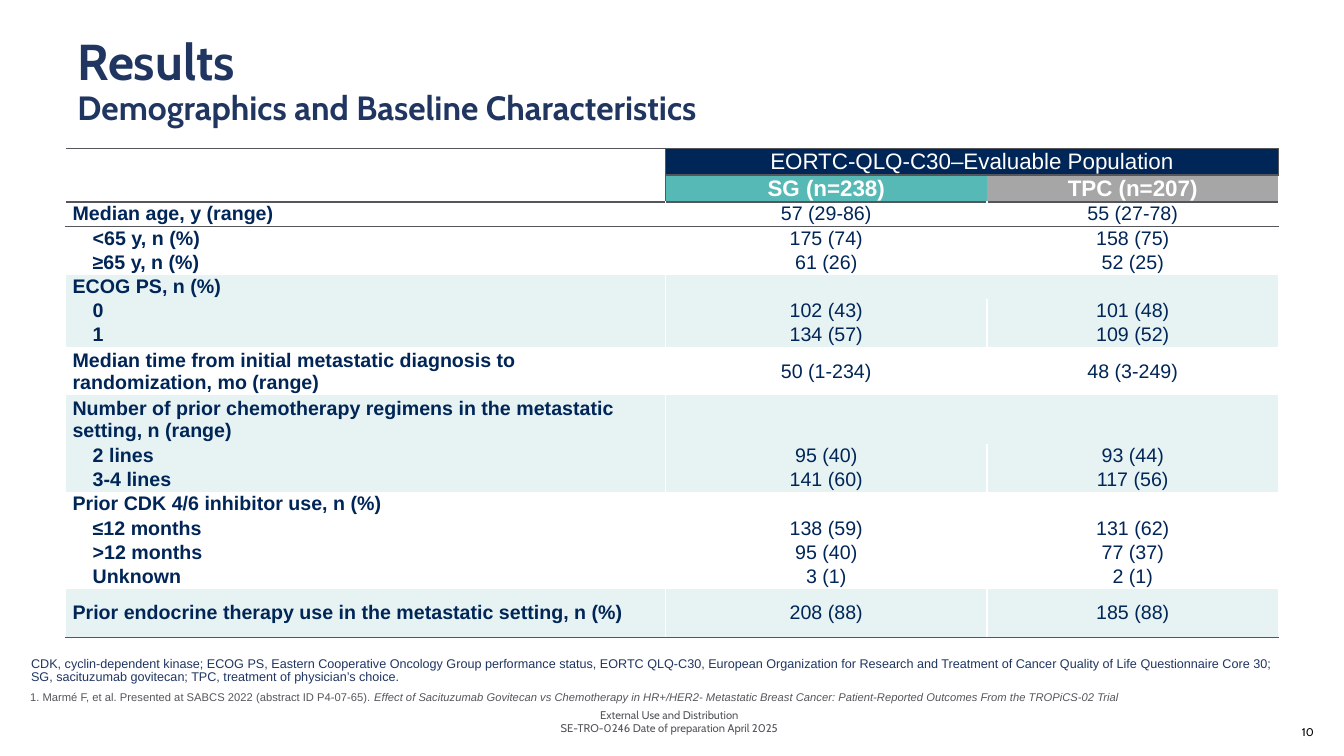
from lxml import etree
from pptx import Presentation
from pptx.dml.color import RGBColor
from pptx.enum.text import MSO_ANCHOR, PP_ALIGN
from pptx.oxml.ns import qn
from pptx.util import Inches, Pt

LEFT, CENTER, RIGHT = PP_ALIGN.LEFT, PP_ALIGN.CENTER, PP_ALIGN.RIGHT
TOP, MIDDLE, BOTTOM = MSO_ANCHOR.TOP, MSO_ANCHOR.MIDDLE, MSO_ANCHOR.BOTTOM
BLANK_LAYOUT = 6
NO_STYLE = "{2D5ABB26-0587-4C30-8999-92F81FD0307C}"
COLORS = {
    "title": "203661", "navy": "002557", "teal": "57B9B5", "silver": "A6A6A6",
    "tint": "E7F3F3", "gray": "54565B", "white": "FFFFFF", "black": "000000",
}
COLUMN_WIDTHS = (5.95, 3.19, 2.89)
ROW_HEIGHT = 0.24
HEADER_ROWS = 2
GROUPS = [
    [("Median age, y (range)", "57 (29-86)", "55 (27-78)"),
     ("<65 y, n (%)", "175 (74)", "158 (75)"),
     ("≥65 y, n (%)", "61 (26)", "52 (25)")],
    [("ECOG PS, n (%)", "", ""),
     ("0", "102 (43)", "101 (48)"),
     ("1", "134 (57)", "109 (52)")],
    [("Median time from initial metastatic diagnosis to randomization, mo (range)",
      "50 (1-234)", "48 (3-249)")],
    [("Number of prior chemotherapy regimens in the metastatic setting, n (range)", "", ""),
     ("2 lines", "95 (40)", "93 (44)"),
     ("3-4 lines", "141 (60)", "117 (56)")],
    [("Prior CDK 4/6 inhibitor use, n (%)", "", ""),
     ("≤12 months", "138 (59)", "131 (62)"),
     (">12 months", "95 (40)", "77 (37)"),
     ("Unknown", "3 (1)", "2 (1)")],
    [("Prior endocrine therapy use in the metastatic setting, n (%)", "208 (88)", "185 (88)")],
]
DOUBLE_ROWS = (8, 9, 16)


def style_span(span, size, color, font="Arial", bold=False, italic=False):
    """Set the font of one run."""
    span.font.name = font
    span.font.size = Pt(size)
    span.font.bold = bold
    span.font.italic = italic
    span.font.color.rgb = RGBColor.from_string(COLORS[color])


def add_text(page, place, paragraphs, align=LEFT, anchor=TOP, spacing=1.0):
    """Add a text box; each paragraph is a list of (text, style) runs."""
    box = page.shapes.add_textbox(*map(Inches, place))
    frame = box.text_frame
    frame.word_wrap = True
    frame.vertical_anchor = anchor
    for index, spans in enumerate(paragraphs):
        para = frame.add_paragraph() if index else frame.paragraphs[0]
        para.alignment = align
        para.line_spacing = spacing
        for text, style in spans:
            span = para.add_run()
            span.text = text
            style_span(span, **style)


def set_borders(cell, **sides):
    """Draw one-point borders on the sides L, R, T and B given by colour name."""
    properties = cell._tc.get_or_add_tcPr()
    for side in "LRTB":
        if side in sides:
            line = etree.SubElement(properties, qn(f"a:ln{side}"), w=str(Pt(1)))
            fill = etree.SubElement(line, qn("a:solidFill"))
            etree.SubElement(fill, qn("a:srgbClr"), val=COLORS[sides[side]])


def fill_cell(cell, text, size, color, fill=None, align=CENTER, bold=False, indent=0):
    """Set the text, insets and fill of one table cell."""
    cell.margin_left = cell.margin_right = Inches(0.07)
    cell.margin_top = cell.margin_bottom = 0
    cell.vertical_anchor = MIDDLE
    if fill:
        cell.fill.solid()
        cell.fill.fore_color.rgb = RGBColor.from_string(COLORS[fill])
    else:
        cell.fill.background()
    para = cell.text_frame.paragraphs[0]
    para.alignment = align
    if text:
        para.text = text
        style_span(para.runs[0], size, color, bold=bold)
    else:
        etree.SubElement(para._p, qn("a:endParaRPr"), sz=str(size * 100))
    if indent:
        para._p.get_or_add_pPr().set("marL", str(Inches(indent)))


def fill_header(table):
    """Fill the two header rows."""
    rows = [
        [("", "white"), ("EORTC-QLQ-C30–Evaluable Population", "navy"), ("", "navy")],
        [("", "white"), ("SG (n=238)", "teal"), ("TPC (n=207)", "silver")],
    ]
    for row, entries in enumerate(rows):
        for column, (text, fill) in enumerate(entries):
            cell = table.cell(row, column)
            if column == 0:
                set_borders(cell, R="gray", T="gray", B="gray")
            elif row == 0:
                set_borders(cell, L="gray", R="gray", T="gray", B="gray")
            else:
                set_borders(cell, T="gray", B="gray")
            fill_cell(cell, text, 16, "white", fill, bold=row == 1)
    table.cell(0, 0).merge(table.cell(1, 0))
    table.cell(0, 1).merge(table.cell(0, 2))


def fill_body(table):
    """Fill the groups of characteristics, every second one tinted."""
    row = HEADER_ROWS
    last = len(table.rows) - 1
    for number, group in enumerate(GROUPS):
        fill = "tint" if number % 2 else None
        for position, entries in enumerate(group):
            edges = {"L": "white", "R": "white"}
            if row == HEADER_ROWS:
                edges["T"] = "gray"
            if row == last:
                edges["B"] = "gray"
            for column, text in enumerate(entries):
                cell = table.cell(row, column)
                set_borders(cell, **edges)
                label = column == 0
                fill_cell(cell, text, 14, "navy", fill, LEFT if label else CENTER,
                          label, 0.2 if label and position else 0)
            if not entries[1]:
                table.cell(row, 1).merge(table.cell(row, 2))
            row += 1


def add_baseline_table(page):
    """Add the table of baseline characteristics."""
    row_count = HEADER_ROWS + sum(map(len, GROUPS))
    heights = [ROW_HEIGHT * (2 if row in DOUBLE_ROWS else 1) for row in range(row_count)]
    table = page.shapes.add_table(
        row_count, len(COLUMN_WIDTHS), Inches(0.65), Inches(1.47),
        Inches(sum(COLUMN_WIDTHS)), Inches(sum(heights))).table
    table.first_row = table.horz_banding = False
    table._tbl.tblPr.find(qn("a:tableStyleId")).text = NO_STYLE
    for column, width in zip(table.columns, COLUMN_WIDTHS):
        column.width = Inches(width)
    for row, height in zip(table.rows, heights):
        row.height = Inches(height)
    fill_header(table)
    fill_body(table)


def main():
    """Build the slide and save it."""
    deck = Presentation()
    deck.slide_width, deck.slide_height = Inches(13.33), Inches(7.5)
    page = deck.slides.add_slide(deck.slide_layouts[BLANK_LAYOUT])
    heading = {"color": "title", "font": "Cabin", "bold": True}
    footer = {"size": 8, "color": "gray", "font": "Cabin"}
    source = {"size": 8, "color": "gray"}

    add_text(page, (5.14, 7, 3, 0.32), [
        [("External Use and Distribution", footer)],
        [("SE-TRO-0246 Date of preparation April 2025", footer)],
    ], CENTER, MIDDLE)
    add_text(page, (0.67, 0.26, 11.95, 1.06), [
        [("Results", {"size": 36, **heading})],
        [("Demographics and Baseline Characteristics", {"size": 24, **heading})],
    ], anchor=BOTTOM, spacing=0.9)
    add_text(page, (10.02, 7.06, 3.11, 0.4),
             [[("10", {**footer, "color": "black"})]], RIGHT, MIDDLE)
    add_text(page, (0.21, 6.3, 12.59, 0.54), [[(
        "CDK, cyclin-dependent kinase; ECOG PS, Eastern Cooperative Oncology Group "
        "performance status, EORTC QLQ-C30, European Organization for Research and "
        "Treatment of Cancer Quality of Life Questionnaire Core 30; SG, sacituzumab "
        "govitecan; TPC, treatment of physician’s choice.",
        {"size": 9, "color": "title"})]], anchor=BOTTOM, spacing=0.9)
    add_baseline_table(page)
    add_text(page, (0.2, 6.8, 13.1, 0.24), [[
        ("1. Marmé F, et al. Presented at SABCS 2022 (abstract ID P4-07-65). ", source),
        ("Effect of Sacituzumab Govitecan vs Chemotherapy in HR+/HER2- Metastatic Breast "
         "Cancer: Patient-Reported Outcomes From the TROPiCS-02 Trial",
         {**source, "italic": True}),
    ]])
    deck.save("out.pptx")


if __name__ == "__main__":
    main()
